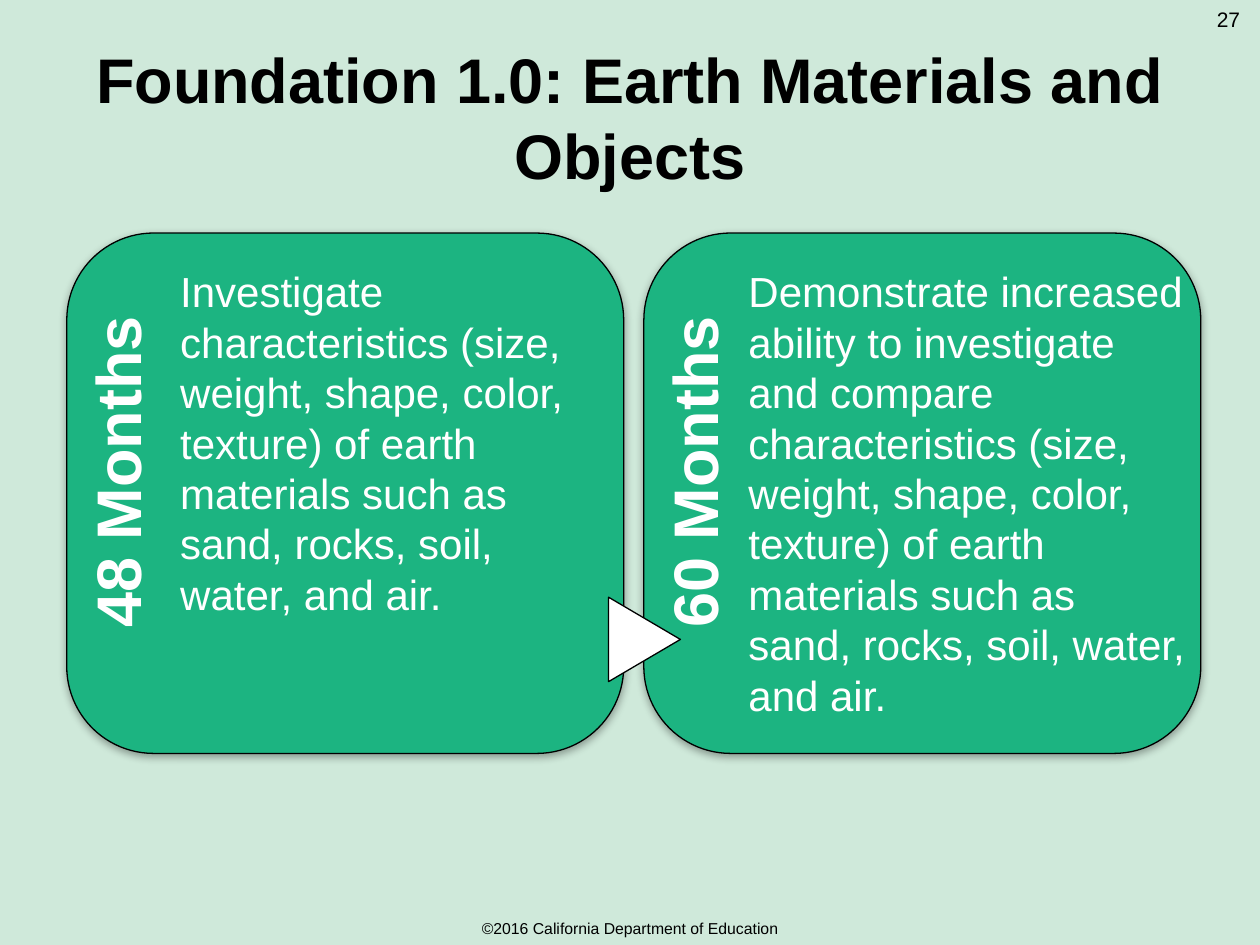
from lxml import etree
from pptx import Presentation
from pptx.dml.color import RGBColor
from pptx.enum.shapes import MSO_SHAPE
from pptx.enum.text import MSO_ANCHOR, MSO_AUTO_SIZE, PP_ALIGN
from pptx.oxml import parse_xml
from pptx.oxml.ns import nsdecls, qn
from pptx.util import Inches, Pt

MINT = RGBColor(0xCF, 0xE9, 0xDA)
GREEN = RGBColor(0x1C, 0xB4, 0x81)
BLACK = RGBColor(0, 0, 0)
WHITE = RGBColor(255, 255, 255)
ROUNDED, TRIANGLE = MSO_SHAPE.ROUNDED_RECTANGLE, MSO_SHAPE.FLOWCHART_EXTRACT
LEFT, CENTER, RIGHT = PP_ALIGN.LEFT, PP_ALIGN.CENTER, PP_ALIGN.RIGHT
TOP, MIDDLE, BOTTOM = MSO_ANCHOR.TOP, MSO_ANCHOR.MIDDLE, MSO_ANCHOR.BOTTOM
NO_AUTOFIT = MSO_AUTO_SIZE.NONE
COMPARISON_LAYOUT = 4


class FoundationSlide:
    """Holds the slide and its style, and adds each kind of element."""

    font = "Arial"

    def __init__(self, slide):
        self.slide = slide
        slide.background.fill.solid()
        slide.background.fill.fore_color.rgb = MINT

    def set_text(self, holder, text, size, color, align, anchor, bold=False, plain=False):
        frame = holder.text_frame
        frame.text = text
        frame.word_wrap = True
        frame.auto_size = NO_AUTOFIT
        frame.vertical_anchor = anchor
        paragraph = frame.paragraphs[0]
        paragraph.alignment = align
        paragraph.space_before = Pt(0)
        if plain:
            properties = paragraph._p.get_or_add_pPr()
            properties.set("marL", "0")
            properties.set("indent", "0")
            properties.append(parse_xml(f"<a:buNone {nsdecls('a')}/>"))
        font = paragraph.runs[0].font
        font.name, font.size, font.bold = self.font, Pt(size), bold
        font.color.rgb = color

    def placeholder(self, idx, box, text, size, color, align, anchor, bold=False, rotation=0):
        holder = self.slide.placeholders[idx]
        holder.left, holder.top, holder.width, holder.height = map(Inches, box)
        holder.rotation = rotation
        self.set_text(holder, text, size, color, align, anchor, bold, plain=idx > 0)

    def note(self, box, text, size, anchor):
        holder = self.slide.shapes.add_textbox(*map(Inches, box))
        self.set_text(holder, text, size, BLACK, CENTER, anchor)

    def shape(self, kind, box, color):
        shape = self.slide.shapes.add_shape(kind, *map(Inches, box))
        shape.shadow.inherit = False
        shape.fill.solid()
        shape.fill.fore_color.rgb = color
        shape.line.color.rgb = BLACK
        shape.line.width = Pt(0.75)
        return shape

    def card(self, box):
        card = self.shape(ROUNDED, box, GREEN)
        card.adjustments[0] = 0.167
        effects = card._element.spPr.find(qn("a:effectLst"))
        shadow = etree.SubElement(effects, qn("a:outerShdw"), blurRad=str(Pt(5)),
                                  dist=str(Pt(1.8)), dir="5400000", rotWithShape="0")
        tint = etree.SubElement(shadow, qn("a:srgbClr"), val=str(BLACK))
        etree.SubElement(tint, qn("a:alpha"), val="35000")
        self.slide.shapes._spTree.insert(2, card._element)

    def arrow(self, box):
        self.shape(TRIANGLE, box, WHITE).rotation = 90


def main():
    deck = Presentation()
    deck.slide_width, deck.slide_height = Inches(10), Inches(7.5)
    page = FoundationSlide(deck.slides.add_slide(deck.slide_layouts[COMPARISON_LAYOUT]))

    page.placeholder(0, (0.5, 0.3, 9, 1.25), "Foundation 1.0: Earth Materials and Objects",
                     36, BLACK, CENTER, MIDDLE, bold=True)
    characteristics = ("characteristics (size, weight, shape, color, texture) of earth "
                       "materials such as sand, rocks, soil, water, and air.")
    stages = [
        ("48 Months", "Investigate " + characteristics, 0.53, 1.33, 3.65),
        ("60 Months", "Demonstrate increased ability to investigate and compare "
         + characteristics, 5.11, 5.84, 3.69),
    ]
    for number, (age, skill, card_left, skill_left, skill_width) in enumerate(stages):
        page.card((card_left, 1.85, 4.42, 4.13))
        page.placeholder(2 * number + 1, (card_left - 1.82, 4.27, 4.42, 0.7), age,
                         36, WHITE, RIGHT, BOTTOM, bold=True, rotation=270)
        page.placeholder(2 * number + 2, (skill_left, 2.06, skill_width, 2.62), skill,
                         24, WHITE, LEFT, TOP)
    page.arrow((4.78, 4.79, 0.67, 0.57))
    page.note((9.5, 0, 0.5, 0.4), "27", 12, TOP)
    page.note((0, 7.24, 10, 0.25), "©2016 California Department of Education", 9, MIDDLE)

    deck.save("out.pptx")


if __name__ == "__main__":
    main()
